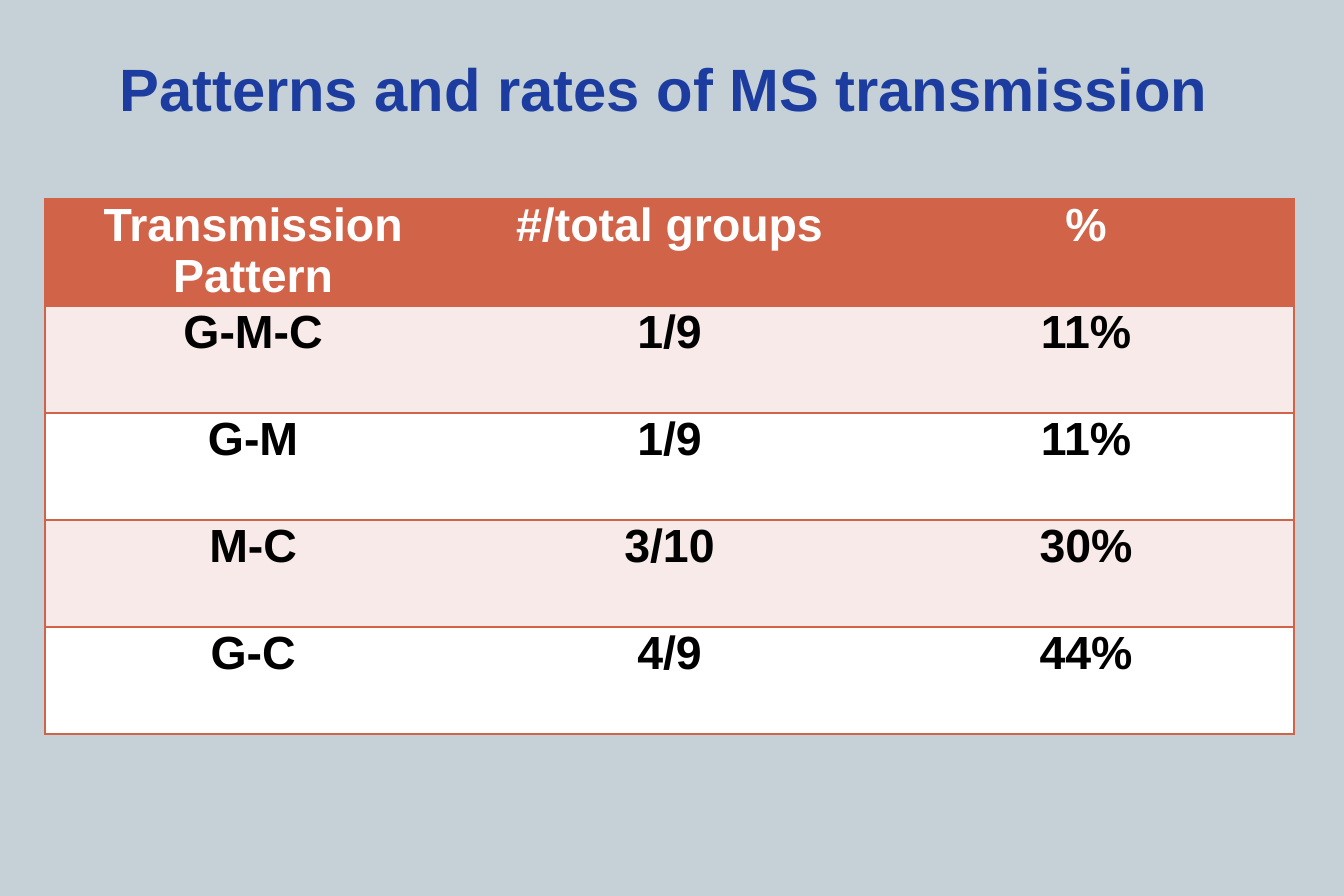
"""Build the slide on patterns and rates of MS transmission."""
from lxml import etree
from pptx import Presentation
from pptx.dml.color import RGBColor
from pptx.enum.text import MSO_ANCHOR, PP_ALIGN
from pptx.oxml.ns import qn
from pptx.util import Pt

TITLE = "Patterns and rates of MS transmission "
ROWS = [
    ("Transmission Pattern", "#/total groups", "%"),
    ("G-M-C", "1/9", "11%"),
    ("G-M", "1/9", "11%"),
    ("M-C", "3/10", "30%"),
    ("G-C", "4/9", "44%"),
]

FONT = "Arial"
BACKGROUND = RGBColor(0xC5, 0xD1, 0xD7)
BLUE = RGBColor(0x1C, 0x3D, 0x9F)
ORANGE = RGBColor(0xD1, 0x63, 0x49)
PINK = RGBColor(0xF7, 0xEA, 0xE9)
WHITE = RGBColor(0xFF, 0xFF, 0xFF)
BLACK = RGBColor(0x00, 0x00, 0x00)
CENTER = PP_ALIGN.CENTER
BOTTOM = MSO_ANCHOR.BOTTOM

LEFT, TABLE_TOP = 27, 120
COLUMN_WIDTH, ROW_HEIGHT = 251, 64.5
CELL_MARGIN = 5.4
BORDER_WIDTH = 1


def add_text(paragraph, text, size, color):
    paragraph.alignment = CENTER
    run = paragraph.add_run()
    run.text = text
    run.font.name = FONT
    run.font.size = Pt(size)
    run.font.bold = True
    run.font.color.rgb = color


def set_borders(cell, visible_sides):
    properties = cell._tc.get_or_add_tcPr()
    for side in "LRTB":
        line = etree.SubElement(properties, qn(f"a:ln{side}"), w=str(Pt(BORDER_WIDTH)))
        if side in visible_sides:
            fill = etree.SubElement(line, qn("a:solidFill"))
            etree.SubElement(fill, qn("a:srgbClr"), val=str(ORANGE))
        else:
            etree.SubElement(line, qn("a:noFill"))


def add_title(slide):
    title = slide.shapes.title
    title.left, title.top, title.width, title.height = Pt(LEFT), Pt(18), Pt(756), Pt(60)
    title.text_frame.vertical_anchor = BOTTOM
    add_text(title.text_frame.paragraphs[0], TITLE, 36, BLUE)


def add_rates_table(slide):
    row_count, column_count = len(ROWS), len(ROWS[0])
    table = slide.shapes.add_table(
        row_count, column_count, Pt(LEFT), Pt(TABLE_TOP),
        Pt(COLUMN_WIDTH * column_count), Pt(ROW_HEIGHT * row_count)).table
    for column in table.columns:
        column.width = Pt(COLUMN_WIDTH)
    for row_index, values in enumerate(ROWS):
        table.rows[row_index].height = Pt(ROW_HEIGHT)
        is_header = row_index == 0
        band = ORANGE if is_header else PINK if row_index % 2 else WHITE
        for column_index, value in enumerate(values):
            cell = table.cell(row_index, column_index)
            cell.margin_left = cell.margin_right = Pt(CELL_MARGIN)
            cell.margin_top = cell.margin_bottom = 0
            sides = "TB"
            if column_index == 0:
                sides += "L"
            if column_index == column_count - 1:
                sides += "R"
            set_borders(cell, sides)
            cell.fill.solid()
            cell.fill.fore_color.rgb = band
            add_text(cell.text_frame.paragraphs[0], value, 28, WHITE if is_header else BLACK)


def main():
    presentation = Presentation()
    presentation.slide_width, presentation.slide_height = Pt(810), Pt(540)
    slide = presentation.slides.add_slide(presentation.slide_layouts[5])
    slide.background.fill.solid()
    slide.background.fill.fore_color.rgb = BACKGROUND
    add_title(slide)
    add_rates_table(slide)
    presentation.save("out.pptx")


if __name__ == "__main__":
    main()
